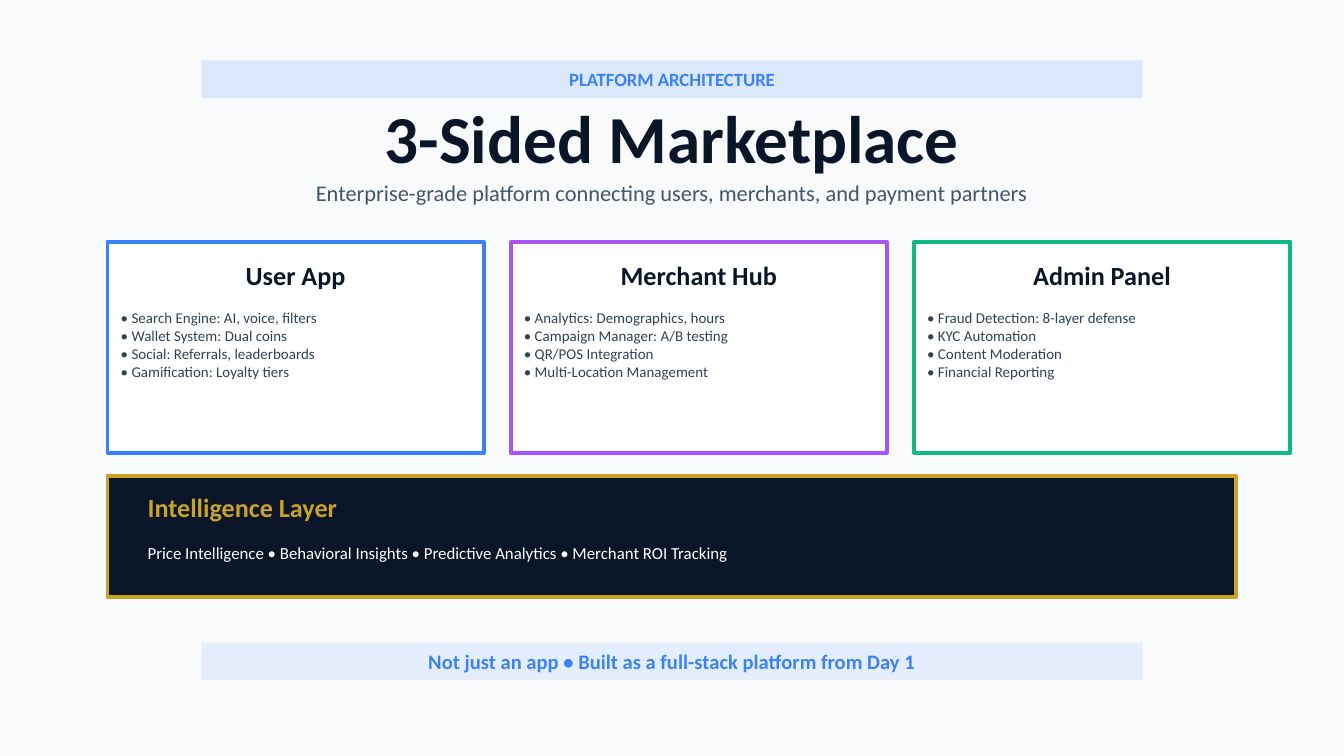
from lxml import etree
from pptx import Presentation, util as u
from pptx.dml.color import RGBColor
from pptx.enum import shapes, text
from pptx.oxml.ns import qn

HUE = {
    "page": "F8FAFC", "white": "FFFFFF", "navy": "0A1628", "slate": "475569",
    "body": "334155", "blue": "3B82F6", "violet": "A855F7", "green": "10B981",
    "gold": "C9A227",
}
CARDS = [
    ("User App", "blue", [
        "Search Engine: AI, voice, filters", "Wallet System: Dual coins",
        "Social: Referrals, leaderboards", "Gamification: Loyalty tiers"]),
    ("Merchant Hub", "violet", [
        "Analytics: Demographics, hours", "Campaign Manager: A/B testing",
        "QR/POS Integration", "Multi-Location Management"]),
    ("Admin Panel", "green", [
        "Fraud Detection: 8-layer defense", "KYC Automation",
        "Content Moderation", "Financial Reporting"]),
]
LAYER = ["Price Intelligence", "Behavioral Insights", "Predictive Analytics",
         "Merchant ROI Tracking"]
BANDS = [
    ("PLATFORM ARCHITECTURE", 0.45, 10, 15),
    ("Not just an app • Built as a full-stack platform from Day 1", 4.78, 11, 10),
]
PAGE = 10
LEFT, TOP, WIDE, TALL, GAP = 0.8, 1.8, 2.8, 1.57, 0.2

deck = Presentation()
deck.slide_width, deck.slide_height = u.Inches(PAGE), u.Inches(PAGE * 9 / 16)
slide = deck.slides.add_slide(deck.slide_layouts[6])


def rgb(name):
    return RGBColor.from_string(HUE[name])


def paint(fill, name):
    fill.solid()
    fill.fore_color.rgb = rgb(name)


def box(at, fill, line=None, alpha=None):
    shape = slide.shapes.add_shape(shapes.MSO_SHAPE.RECTANGLE, *map(u.Inches, at))
    shape.shadow.inherit = False
    paint(shape.fill, fill)
    if alpha:
        tone = shape.fill._xPr.find(qn("a:solidFill"))[0]
        etree.SubElement(tone, qn("a:alpha"), val=str(alpha * 1000))
    if line:
        shape.line.color.rgb = rgb(line)
        shape.line.width = u.Pt(2)
    else:
        shape.line.fill.background()
    return shape


def write(words, at=None, shape=None, size=12, hue="navy", bold=False,
          center=True, middle=True):
    shape = shape or slide.shapes.add_textbox(*map(u.Inches, at))
    frame = shape.text_frame
    frame.word_wrap = True
    frame.vertical_anchor = (
        text.MSO_ANCHOR.MIDDLE if middle else text.MSO_ANCHOR.TOP)
    frame.text = words
    for para in frame.paragraphs:
        para.alignment = text.PP_ALIGN.CENTER if center else text.PP_ALIGN.LEFT
        for run in para.runs:
            run.font.name = "Calibri"
            run.font.size = u.Pt(size)
            run.font.bold = bold
            run.font.color.rgb = rgb(hue)


paint(slide.background.fill, "page")

for words, y, size, alpha in BANDS:
    band = box((1.5, y, 7, 0.28), "blue", alpha=alpha)
    write(words, shape=band, size=size, hue="blue", bold=True)

write("3-Sided Marketplace", (1, 0.79, 8, 0.45), size=36, bold=True)
write("Enterprise-grade platform connecting users, merchants, and payment partners",
      (1.5, 1.29, 7, 0.28), hue="slate")

for i, (title, hue, items) in enumerate(CARDS):
    x = LEFT + i * (WIDE + GAP)
    box((x, TOP, WIDE, TALL), "white", hue)
    write(title, (x, TOP + 0.11, WIDE, 0.28), size=14, bold=True)
    write("\n".join(f"• {item}" for item in items),
          (x, TOP + 0.45, WIDE - 0.1, 1.01), size=8, hue="body",
          center=False, middle=False)

box((LEFT, 3.54, PAGE - 2 * LEFT, 0.9), "navy", "gold")
write("Intelligence Layer", (1, 3.66, 8, 0.23), size=14, hue="gold", bold=True,
      center=False)
write(" • ".join(LAYER), (1, 3.94, 8, 0.34), size=9, hue="white", center=False)

deck.save("out.pptx")
